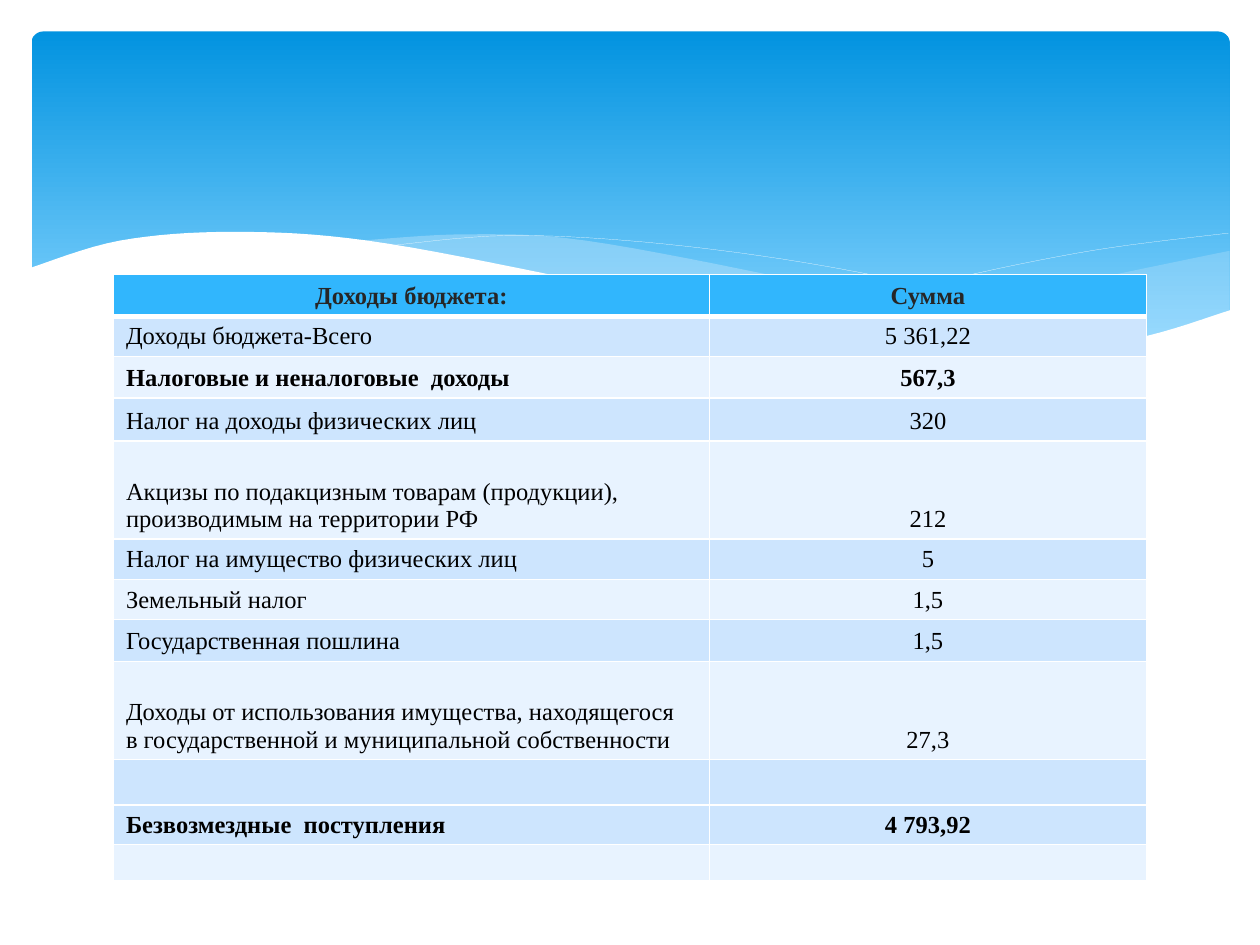
from lxml.etree import SubElement
from pptx import Presentation
from pptx.dml.color import RGBColor
from pptx.enum.shapes import MSO_SHAPE
from pptx.enum.text import MSO_ANCHOR, PP_ALIGN
from pptx.oxml.ns import qn
from pptx.util import Inches, Pt

WHITE, PALE_BLUE = "FFFFFF", "C6E7FC"
HEADER, DARK, LIGHT = "31B6FD", "CDE5FE", "E8F3FF"
HEADER_TEXT, BODY_TEXT = "262626", "000000"
BANNER_GRADIENT = [(0, "0293E0"), (0.9, "83D3FE")]
THIN_BORDER, HEADER_BORDER = 1, 3
STEPS_PER_SPAN = 8

BUDGET = [
    ("Доходы бюджета:", "Сумма", 0.33, HEADER, True),
    ("Доходы бюджета-Всего", "5 361,22", 0.32, DARK, False),
    ("Налоговые и неналоговые  доходы", "567,3", 0.33, LIGHT, True),
    ("Налог на доходы физических лиц", "320", 0.34, DARK, False),
    ("Акцизы по подакцизным товарам (продукции), производимым на территории РФ",
     "212", 0.78, LIGHT, False),
    ("Налог на имущество физических лиц", "5", 0.32, DARK, False),
    ("Земельный налог", "1,5", 0.32, LIGHT, False),
    ("Государственная пошлина", "1,5", 0.33, DARK, False),
    ("Доходы от использования имущества, находящегося  в государственной "
     "и муниципальной собственности", "27,3", 0.78, LIGHT, False),
    ("", "", 0.36, DARK, False),
    ("Безвозмездные  поступления", "4 793,92", 0.3, DARK, True),
    ("", "", 0.29, LIGHT, False),
]
COLUMN_WIDTHS = [4.73, 3.47]

RIGHT_WAVE = {
    "edges": [
        [(6.61, 2.65), (7.53, 2.48), (8.61, 2.23), (9.76, 1.99)],
        [(9.76, 2.47), (9.13, 2.67), (8.14, 2.78), (6.61, 2.65)],
    ],
    "fill": PALE_BLUE, "opacity": 29,
}
MIDDLE_WAVE = {
    "edges": [
        [(2.86, 1.91), (3.7, 1.86), (4.65, 1.91), (6.29, 2.22), (7.41, 2.48), (8.93, 2.73)],
        [(8.93, 2.73), (8.07, 2.78), (6.95, 2.7), (4.49, 2.22), (2.86, 1.91)],
    ],
    "fill": PALE_BLUE, "opacity": 40,
}
WHITE_WAVE = {
    "edges": [
        [(0.23, 2.13), (0.95, 1.91), (1.85, 1.84), (2.92, 1.91), (4.47, 2.2),
         (6.03, 2.54), (8.09, 2.77), (8.99, 2.69), (9.77, 2.46)],
        [(9.77, 3.29), (0.23, 3.29)],
    ],
    "fill": WHITE, "opacity": 100,
}
LEFT_CREST = [(3.09, 1.95), (4.01, 1.87), (5.1, 1.92), (6.36, 2.08), (7.6, 2.33), (9.07, 2.72)]
RIGHT_CREST = [(6.13, 2.57), (7.48, 2.23), (8.66, 1.99), (9.75, 1.85)]


def color(value):
    return RGBColor.from_string(value)


def blend(before, start, end, after, t):
    """Return the Catmull-Rom value at t between start and end."""
    return (start + (end - before) * t / 2
            + (2 * before - 5 * start + 4 * end - after) * t ** 2 / 2
            + (3 * start - before - 3 * end + after) * t ** 3 / 2)


def smooth(knots):
    """Return points along a soft curve that passes through the knots."""
    padded = [knots[0], *knots, knots[-1]]
    points = [knots[0]]
    for span in zip(padded, padded[1:], padded[2:], padded[3:]):
        for step in range(1, STEPS_PER_SPAN + 1):
            points.append(tuple(blend(*axis, step / STEPS_PER_SPAN) for axis in zip(*span)))
    return points


def add_outline(page, edges, close):
    """Draw the smoothed edges one after another as a single outline."""
    start, *rest = [(Inches(x), Inches(y)) for edge in edges for x, y in smooth(edge)]
    builder = page.shapes.build_freeform(*start)
    builder.add_line_segments(rest, close=close)
    outline = builder.convert_to_shape()
    outline.shadow.inherit = False
    return outline


def add_wave(page, edges, fill, opacity):
    wave = add_outline(page, edges, close=True)
    wave.line.fill.background()
    wave.fill.solid()
    wave.fill.fore_color.rgb = color(fill)
    if opacity < 100:
        shade = wave.element.spPr.find(".//" + qn("a:srgbClr"))
        SubElement(shade, qn("a:alpha"), val=str(opacity * 1000))


def add_crest(page, knots):
    crest = add_outline(page, [knots], close=False)
    crest.fill.background()
    crest.line.color.rgb = color(WHITE)
    crest.line.width = Pt(0.1)


def add_banner(page):
    banner = page.shapes.add_shape(MSO_SHAPE.ROUNDED_RECTANGLE, Inches(0.25),
                                   Inches(0.25), Inches(9.51), Inches(2.7))
    banner.adjustments[0] = 0.034
    banner.shadow.inherit = False
    banner.line.fill.background()
    banner.fill.gradient()
    banner.fill.gradient_angle = 270
    for stop, (position, shade) in zip(banner.fill.gradient_stops, BANNER_GRADIENT):
        stop.position = position
        stop.color.rgb = color(shade)


def add_borders(cell, top, bottom):
    properties = cell._tc.get_or_add_tcPr()
    sides = {"L": THIN_BORDER, "R": THIN_BORDER, "T": top, "B": bottom}
    for side, width in sides.items():
        line = SubElement(properties, qn("a:ln" + side), w=str(Pt(width)))
        SubElement(SubElement(line, qn("a:solidFill")), qn("a:srgbClr"), val=WHITE)


def fill_cell(cell, text, fill, bold, text_color, alignment):
    cell.fill.solid()
    cell.fill.fore_color.rgb = color(fill)
    cell.vertical_anchor = MSO_ANCHOR.BOTTOM
    cell.text = text
    para = cell.text_frame.paragraphs[0]
    para.alignment = alignment
    para.font.name = "Times New Roman"
    para.font.size = Pt(14 if text else 12)
    para.font.bold = bold
    para.font.color.rgb = color(text_color)


def add_budget(page):
    total_height = sum(height for _, _, height, _, _ in BUDGET)
    table = page.shapes.add_table(
        len(BUDGET), len(COLUMN_WIDTHS), Inches(0.9), Inches(2.18),
        Inches(sum(COLUMN_WIDTHS)), Inches(total_height)).table
    for column, width in zip(table.columns, COLUMN_WIDTHS):
        column.width = Inches(width)
    for index, (label, amount, height, fill, bold) in enumerate(BUDGET):
        is_header = index == 0
        top = HEADER_BORDER if index == 1 else THIN_BORDER
        bottom = HEADER_BORDER if is_header else THIN_BORDER
        text_color = HEADER_TEXT if is_header else BODY_TEXT
        label_alignment = PP_ALIGN.CENTER if is_header else PP_ALIGN.LEFT
        row = table.rows[index]
        row.height = Inches(height)
        contents = [(label, label_alignment), (amount, PP_ALIGN.CENTER)]
        for cell, (text, alignment) in zip(row.cells, contents):
            add_borders(cell, top, bottom)
            fill_cell(cell, text, fill, bold, text_color, alignment)


def main():
    """Build the budget income slide."""
    deck = Presentation()
    deck.slide_width, deck.slide_height = Inches(10), Inches(7.5)
    page = deck.slides.add_slide(deck.slide_layouts[6])
    add_banner(page)
    for wave in (RIGHT_WAVE, MIDDLE_WAVE):
        add_wave(page, **wave)
    for knots in (LEFT_CREST, RIGHT_CREST):
        add_crest(page, knots)
    add_wave(page, **WHITE_WAVE)
    add_budget(page)
    deck.save("out.pptx")


if __name__ == "__main__":
    main()
